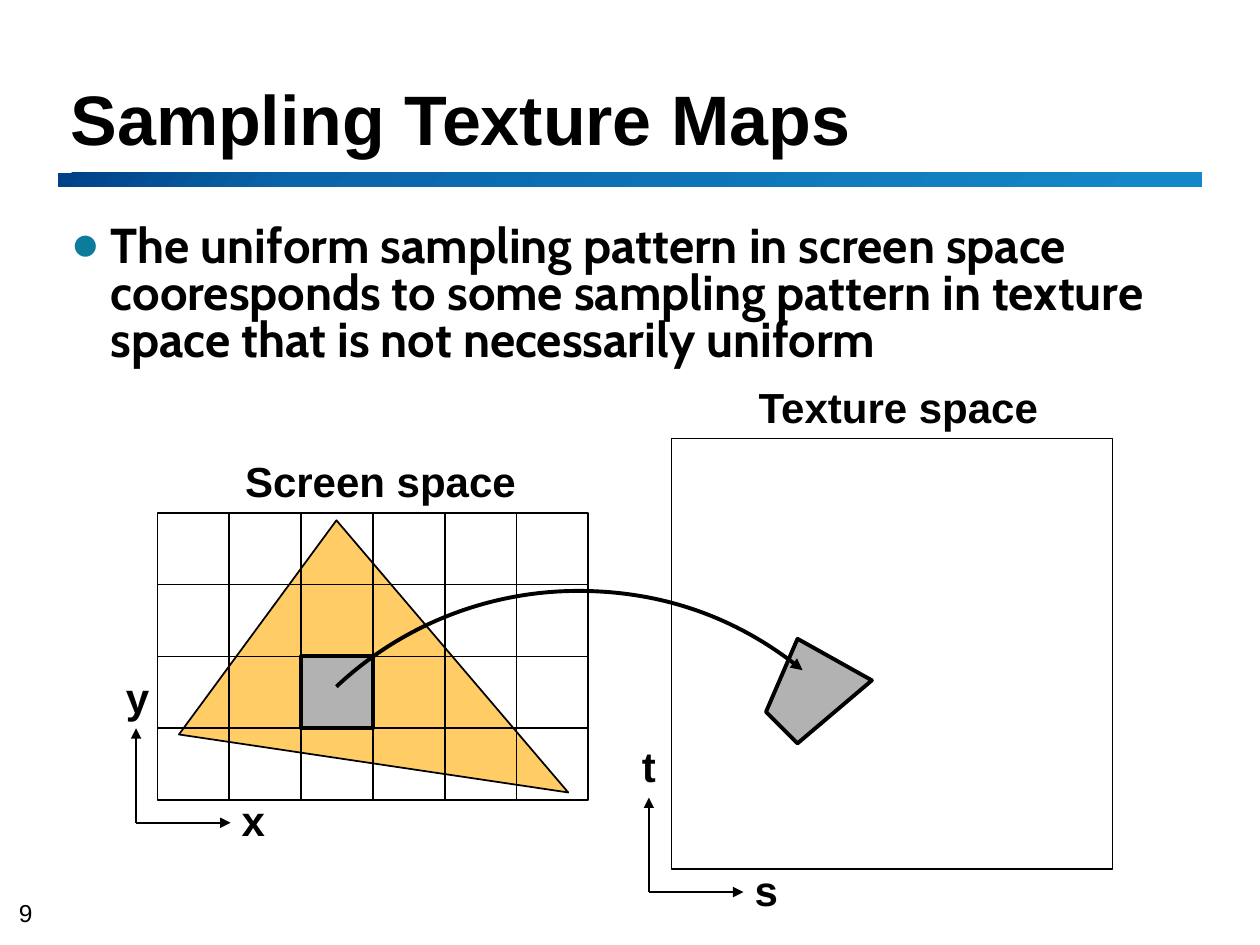
from copy import deepcopy

from lxml import etree
from pptx import Presentation
from pptx import util as u
from pptx.dml.color import RGBColor
from pptx.enum import shapes, text
from pptx.oxml.ns import qn

COLORS = {
    "ink": "000000",
    "triangle": "FFCC66",
    "sample": "B2B2B2",
    "bullet": "0C7B9C",
}
BAR_STOPS = [(0, "004187"), (0.21, "0A64A8"), (0.96, "1487C8")]
CELL = 0.57
GRID_LEFT, GRID_TOP = 1.25, 4.07
COLUMNS, ROWS = 6, 4
SAMPLED_CELL = (2, 2)
AXIS_LENGTH = 0.75


def inches(*values):
    return [u.Inches(v) for v in values]


def rgb(name):
    return RGBColor.from_string(COLORS[name])


def style(sp, fill=None, weight=1):
    """Give a shape a black outline and a solid fill, or none."""
    sp.shadow.inherit = False
    if fill:
        sp.fill.solid()
        sp.fill.fore_color.rgb = rgb(fill)
    else:
        sp.fill.background()
    sp.line.color.rgb = rgb("ink")
    sp.line.width = u.Pt(weight)


def add_arrowhead(line):
    ln = next(line._element.iter(qn("a:ln")))
    etree.SubElement(ln, qn("a:tailEnd"), type="triangle")


def add_run(p, words, size, font="Arial", bold=True):
    r = p.add_run()
    r.text = words
    r.font.size = u.Pt(size)
    r.font.name = font
    r.font.bold = bold
    r.font.color.rgb = rgb("ink")


def add_rect(container, left, top, width, height, **look):
    sp = container.add_shape(
        shapes.MSO_SHAPE.RECTANGLE, *inches(left, top, width, height))
    style(sp, **look)
    return sp


def add_path(container, points, close=True, **look):
    builder = container.build_freeform(*inches(*points[0]), scale=1.0)
    builder.add_line_segments([inches(*pt) for pt in points[1:]], close=close)
    sp = builder.convert_to_shape()
    style(sp, **look)
    return sp


def add_curved_arrow(container, points):
    """Draw cubic curves: a start, then two controls and an end for each."""
    sp = add_path(container, points, close=False, weight=2.25)
    lines = list(sp._element.iter(qn("a:lnTo")))
    for i in range(0, len(lines), 3):
        curve = etree.Element(qn("a:cubicBezTo"))
        lines[i].addprevious(curve)
        for line in lines[i:i + 3]:
            curve.append(line[0])
            line.getparent().remove(line)
    add_arrowhead(sp)


def add_label(container, words, center_x, center_y, width=0.36):
    box = container.add_textbox(
        *inches(center_x - width / 2, center_y - 0.25, width, 0.5))
    tf = box.text_frame
    tf.word_wrap = False
    p = tf.paragraphs[0]
    p.alignment = text.PP_ALIGN.CENTER
    add_run(p, words, 24)


def add_axes(container, x, y, across, up):
    """Draw two axes from the corner (x, y) with their letters."""
    group = container.add_group_shape().shapes
    for end in [(x, y - AXIS_LENGTH), (x + AXIS_LENGTH, y)]:
        line = group.add_connector(
            shapes.MSO_CONNECTOR.STRAIGHT, *inches(x, y, *end))
        line.line.color.rgb = rgb("ink")
        line.line.width = u.Pt(1)
        add_arrowhead(line)
        etree.SubElement(line._element.spPr, qn("a:effectLst"))
    add_label(group, across, x + 0.92, y - 0.02)
    add_label(group, up, x, y - 1)


def add_pixel_grid(container):
    group = container.add_group_shape().shapes
    for row in range(ROWS):
        for column in range(COLUMNS):
            look = {}
            if (column, row) == SAMPLED_CELL:
                look = {"fill": "sample", "weight": 2.25}
            add_rect(group, GRID_LEFT + column * CELL, GRID_TOP + row * CELL,
                     CELL, CELL, **look)


def add_title_bar(container):
    bar = add_rect(container, 0.46, 1.37, 9.08, 0.11)
    bar.line.fill.background()
    bar.fill.gradient()
    bar.fill.gradient_angle = 315
    stop_list = next(bar._element.iter(qn("a:gsLst")))
    stop_list.append(deepcopy(stop_list[-1]))
    for stop, (position, color) in zip(bar.fill.gradient_stops, BAR_STOPS):
        stop.position = position
        stop.color.rgb = RGBColor.from_string(color)


def add_slide_number(container, number):
    tf = container.add_textbox(*inches(0.1, 7.13, 0.34, 0.23)).text_frame
    tf.margin_left = u.Inches(0.05)
    tf.margin_right = tf.margin_top = tf.margin_bottom = 0
    tf.vertical_anchor = text.MSO_ANCHOR.BOTTOM
    add_run(tf.paragraphs[0], number, 14, bold=False)


def place(sp, left, top, width, height, anchor):
    """Move a placeholder and return its first paragraph."""
    sp.left, sp.top, sp.width, sp.height = inches(left, top, width, height)
    tf = sp.text_frame
    tf.word_wrap = True
    tf.auto_size = text.MSO_AUTO_SIZE.NONE
    tf.vertical_anchor = anchor
    p = tf.paragraphs[0]
    p.alignment = text.PP_ALIGN.LEFT
    return p


def fill_title(sp, words):
    p = place(sp, 0.46, 0.33, 9.06, 0.99, text.MSO_ANCHOR.BOTTOM)
    p.line_spacing = u.Pt(36)
    add_run(p, words, 40)


def fill_body(sp, words):
    p = place(sp, 0.46, 1.74, 9.1, 5.54, text.MSO_ANCHOR.TOP)
    pPr = p._p.get_or_add_pPr()
    pPr.set("marL", str(u.Inches(0.32)))
    pPr.set("indent", str(u.Inches(-0.32)))
    color = etree.SubElement(pPr, qn("a:buClr"))
    etree.SubElement(color, qn("a:srgbClr"), val=COLORS["bullet"])
    etree.SubElement(pPr, qn("a:buFont"), typeface="Arial")
    etree.SubElement(pPr, qn("a:buChar"), char="●")
    p.line_spacing = u.Pt(27)
    p.space_before = u.Pt(0)
    p.space_after = u.Pt(4)
    add_run(p, words, 28, font="Cabin")


def main():
    prs = Presentation()
    prs.slide_width, prs.slide_height = inches(10, 7.5)
    s = prs.slides.add_slide(prs.slide_layouts[1])
    fill_title(s.shapes.title, "Sampling Texture Maps")
    fill_body(s.placeholders[1],
              "The uniform sampling pattern in screen space cooresponds to "
              "some sampling pattern in texture space that is not "
              "necessarily uniform")
    add_slide_number(s.shapes, "9")
    add_title_bar(s.shapes)

    add_path(s.shapes, [(2.67, 4.13), (4.51, 6.29), (1.42, 5.83)],
             fill="triangle")
    add_pixel_grid(s.shapes)
    add_rect(s.shapes, 5.33, 3.48, 3.5, 3.42)
    add_path(s.shapes, [(6.33, 5.07), (6.92, 5.4), (6.33, 5.9), (6.08, 5.65)],
             fill="sample", weight=2.25)
    add_curved_arrow(s.shapes, [
        (2.67, 5.45), (3.19, 4.96), (3.88, 4.69), (4.59, 4.69),
        (5.24, 4.69), (5.87, 4.91), (6.37, 5.32)])

    add_label(s.shapes, "Screen space", 3.02, 3.82, 2.37)
    add_label(s.shapes, "Texture space", 7.13, 3.23, 2.44)
    add_axes(s.shapes, 1.08, 6.53, "x", "y")
    add_axes(s.shapes, 5.15, 7.08, "s", "t")
    prs.save("out.pptx")


if __name__ == "__main__":
    main()
